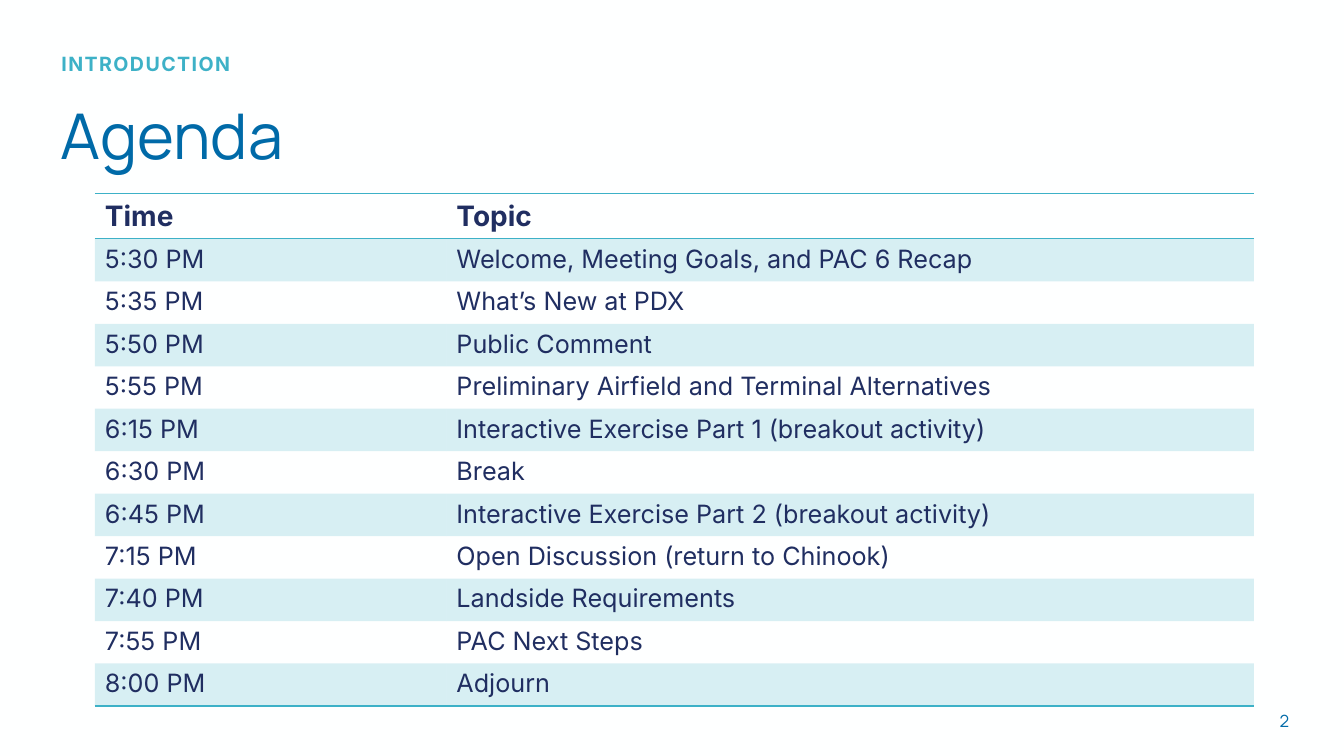
import pptx
import pptx.dml.color
import pptx.enum.text
import pptx.oxml
import pptx.oxml.ns
import pptx.util
from pptx.util import Cm

RGBColor = pptx.dml.color.RGBColor
TEAL = RGBColor(0x3D, 0xB1, 0xC7)
BLUE = RGBColor(0x00, 0x6A, 0xA8)
NAVY = RGBColor(0x20, 0x2E, 0x61)
PAPER = RGBColor(0xFE, 0xFF, 0xFF)
ALIGN = pptx.enum.text.PP_ALIGN
ANCHOR = pptx.enum.text.MSO_ANCHOR
NAMESPACE = pptx.oxml.ns.nsdecls("a")
NO_STYLE = "{2D5ABB26-0587-4C30-8999-92F81FD0307C}"

AGENDA = [
    ("Time", "Topic"),
    ("5:30 PM", "Welcome, Meeting Goals, and PAC 6 Recap"),
    ("5:35 PM", "What’s New at PDX"),
    ("5:50 PM", "Public Comment"),
    ("5:55 PM", "Preliminary Airfield and Terminal Alternatives"),
    ("6:15 PM", "Interactive Exercise Part 1 (breakout activity)"),
    ("6:30 PM", "Break"),
    ("6:45 PM", "Interactive Exercise Part 2 (breakout activity)"),
    ("7:15 PM", "Open Discussion (return to Chinook)"),
    ("7:40 PM", "Landside Requirements"),
    ("7:55 PM", "PAC Next Steps"),
    ("8:00 PM", "Adjourn"),
]


def write(para, text, color, **formats):
    span = para.add_run()
    span.text = text
    span.font.color.rgb = color
    for name, value in formats.items():
        setattr(span.font, name, value)
    return span


def add_border(cell, side, position):
    line = pptx.oxml.parse_xml(
        f'<a:{side} {NAMESPACE} w="12700"><a:solidFill>'
        f'<a:srgbClr val="{TEAL}"/></a:solidFill></a:{side}>'
    )
    cell._tc.get_or_add_tcPr().insert(position, line)


deck = pptx.Presentation()
deck.slide_width = Cm(33.87)
deck.slide_height = Cm(19.05)
page = deck.slides.add_slide(deck.slide_layouts[5])
page.background.fill.solid()
page.background.fill.fore_color.rgb = PAPER

title = page.shapes.title
section = page.shapes.add_textbox(Cm(1.3), Cm(1.24), Cm(16.51), Cm(1.55))
number = page.shapes.add_textbox(Cm(23.93), Cm(17.65), Cm(8.81), Cm(1.02))
title_place = {"left": Cm(1.27), "top": Cm(2.54), "width": Cm(31.32), "height": Cm(1.91)}
for name, value in title_place.items():
    setattr(title, name, value)

boxes = [
    (title, "Agenda", BLUE, ANCHOR.MIDDLE, {"alignment": ALIGN.LEFT, "line_spacing": 0.9},
     {"name": "Manrope", "size": pptx.util.Pt(45)}),
    (section, "INTRODUCTION", TEAL, ANCHOR.TOP, {"line_spacing": 0.9},
     {"name": "Inter", "size": pptx.util.Pt(14), "bold": True}),
    (number, "2", BLUE, ANCHOR.MIDDLE, {"alignment": ALIGN.RIGHT},
     {"name": "Manrope", "size": pptx.util.Pt(12)}),
]
for box, text, color, anchor, layout, formats in boxes:
    frame = box.text_frame
    frame.word_wrap = True
    frame.auto_size = pptx.enum.text.MSO_AUTO_SIZE.NONE
    frame.vertical_anchor = anchor
    para = frame.paragraphs[0]
    for name, value in layout.items():
        setattr(para, name, value)
    span = write(para, text, color, **formats)
    if box is section:
        span.font._element.set("spc", "100")

frame = page.shapes.add_table(
    len(AGENDA), 2, Cm(2.39), Cm(4.88), Cm(29.21), Cm(12.91)
)
table = frame.table
table._tbl.tblPr.find(pptx.oxml.ns.qn("a:tableStyleId")).text = NO_STYLE
for column, width in zip(table.columns, (8.86, 20.35)):
    column.width = Cm(width)

for index, entries in enumerate(AGENDA):
    header = index == 0
    table.rows[index].height = Cm(1.14 if header else 1.07)
    for column, text in enumerate(entries):
        cell = table.cell(index, column)
        cell.vertical_anchor = ANCHOR.MIDDLE if header else ANCHOR.TOP
        write(cell.text_frame.paragraphs[0], text, NAVY, name="Inter",
              size=pptx.util.Pt(20 if header else 18), bold=header)
        if index % 2:
            cell.fill.solid()
            cell.fill.fore_color.rgb = TEAL
            tint = cell._tc.tcPr.find(".//" + pptx.oxml.ns.qn("a:srgbClr"))
            tint.append(pptx.oxml.parse_xml(f'<a:alpha {NAMESPACE} val="20000"/>'))
        else:
            cell.fill.background()
        if header or index == len(AGENDA) - 1:
            add_border(cell, "lnB", 0)
        if header:
            add_border(cell, "lnT", 0)

deck.save("out.pptx")
